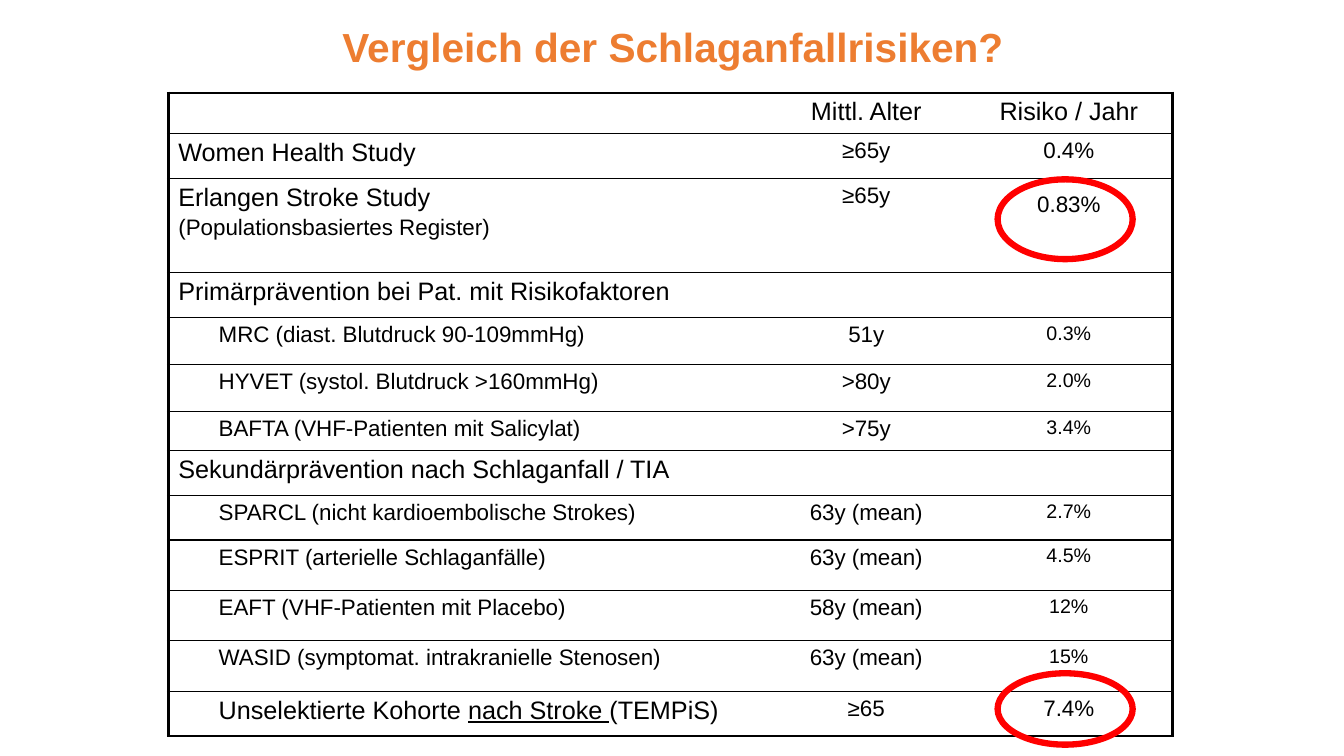
from dataclasses import dataclass

from lxml import etree
from pptx import Presentation
from pptx.dml.color import RGBColor
from pptx.enum.shapes import MSO_SHAPE
from pptx.enum.text import MSO_ANCHOR, PP_ALIGN
from pptx.oxml.ns import qn
from pptx.util import Pt

OVAL = MSO_SHAPE.OVAL
MIDDLE = MSO_ANCHOR.MIDDLE
LEFT, CENTER = PP_ALIGN.LEFT, PP_ALIGN.CENTER
TITLE_ONLY = 5


@dataclass(frozen=True)
class Theme:
    """Colours, font and sizes of the slide."""
    font: str = "Arial"
    accent: str = "ED7D31"
    ink: str = "000000"
    mark: str = "FF0000"
    title: int = 29
    large: int = 18
    medium: int = 16
    small: int = 14
    frame: float = 2.25
    rule: float = 1
    ring: float = 4.5
    indent: float = 28.8
    gap: float = 3


T = Theme()
TITLE_BOX = (157, 0, 648, 65.5)
TABLE_BOX = (120.2, 66.4, 717.1, 459.5)
COL_WIDTHS = (427.7, 141.8, 147.6)
RING_LEFT, RING_WIDTH = 592.4, 96.5
RINGS = ((61.7, 57), (414.5, 51))

HEADER, SECTION, STUDY, TRIAL, COHORT = range(5)
SIZES = {
    HEADER: (T.large, T.large, T.large),
    SECTION: (T.large, T.medium, T.medium),
    STUDY: (T.large, T.medium, T.medium),
    TRIAL: (T.medium, T.medium, T.small),
    COHORT: (T.large, T.medium, T.medium),
}
ROWS = (
    (HEADER, 28.8, "", "Mittl. Alter", "Risiko / Jahr"),
    (STUDY, 32.2, "Women Health Study", "≥65y", "0.4%"),
    (STUDY, 67.4, "Erlangen Stroke Study", "≥65y", "0.83%"),
    (SECTION, 32, "Primärprävention bei Pat. mit Risikofaktoren", "", ""),
    (TRIAL, 33.7, "MRC (diast. Blutdruck 90-109mmHg)", "51y", "0.3%"),
    (TRIAL, 33.7, "HYVET (systol. Blutdruck >160mmHg)", ">80y", "2.0%"),
    (TRIAL, 27.7, "BAFTA (VHF-Patienten mit Salicylat)", ">75y", "3.4%"),
    (SECTION, 32, "Sekundärprävention nach Schlaganfall / TIA", "", ""),
    (TRIAL, 32, "SPARCL (nicht kardioembolische Strokes)", "63y (mean)", "2.7%"),
    (TRIAL, 36, "ESPRIT (arterielle Schlaganfälle)", "63y (mean)", "4.5%"),
    (TRIAL, 36, "EAFT (VHF-Patienten mit Placebo)", "58y (mean)", "12%"),
    (TRIAL, 36, "WASID (symptomat. intrakranielle Stenosen)", "63y (mean)", "15%"),
    (COHORT, 32, "Unselektierte Kohorte ", "≥65", "7.4%"),
)
REGISTER_ROW, COHORT_ROW = 2, len(ROWS) - 1
REGISTER_NOTE = "(Populationsbasiertes Register)"
REGISTER_TOP = 10


def rgb(value):
    """Return a colour from its hex value."""
    return RGBColor.from_string(value)


def style(p, size, color=T.ink, align=LEFT):
    """Set font and alignment of a paragraph."""
    p.alignment = align
    p.font.name, p.font.size = T.font, Pt(size)
    p.font.color.rgb = rgb(color)


def add_title(s, box, text):
    """Move and fill the title placeholder."""
    sp = s.shapes.title
    sp.left, sp.top, sp.width, sp.height = map(Pt, box)
    tf = sp.text_frame
    tf.text, tf.vertical_anchor = text, MIDDLE
    style(tf.paragraphs[0], T.title, T.accent, CENTER)
    tf.paragraphs[0].font.bold = True


def set_borders(cell, widths):
    """Draw the left, right, top and bottom borders, with 0 for none."""
    tcPr = cell._tc.get_or_add_tcPr()
    for side, width in zip("LRTB", widths):
        ln = etree.SubElement(tcPr, qn(f"a:ln{side}"), w=str(int(Pt(width))))
        if width:
            fill = etree.SubElement(ln, qn("a:solidFill"))
            etree.SubElement(fill, qn("a:srgbClr"), val=T.ink)
        else:
            etree.SubElement(ln, qn("a:noFill"))


def fill_row(table, i, row):
    """Write one row with its text styles and borders."""
    kind, height, *texts = row
    table.rows[i].height = Pt(height)
    last = len(texts) - 1
    for j, (text, size) in enumerate(zip(texts, SIZES[kind])):
        cell = table.cell(i, j)
        set_borders(cell, (
            T.frame if j == 0 else 0,
            T.frame if j == last else 0,
            T.frame if i == 0 else T.rule,
            T.frame if i == COHORT_ROW else T.rule,
        ))
        cell.fill.background()
        p = cell.text_frame.paragraphs[0]
        if text:
            p.add_run().text = text
        style(p, size, align=CENTER if j else LEFT)
        if j == 0 and kind in (TRIAL, COHORT):
            p._p.get_or_add_pPr().set("marL", str(int(Pt(T.indent))))


def add_risk_table(s, box):
    """Add the table of studies, mean ages and yearly risks."""
    frame = s.shapes.add_table(len(ROWS), len(COL_WIDTHS), *map(Pt, box))
    table = frame.table
    table.first_row = table.horz_banding = False
    for column, width in zip(table.columns, COL_WIDTHS):
        column.width = Pt(width)
    for i, row in enumerate(ROWS):
        fill_row(table, i, row)

    p = table.cell(REGISTER_ROW, 0).text_frame.add_paragraph()
    p.text = REGISTER_NOTE
    style(p, T.medium)
    p.space_before = Pt(T.gap)
    table.cell(REGISTER_ROW, 2).margin_top = Pt(REGISTER_TOP)

    p = table.cell(COHORT_ROW, 0).text_frame.paragraphs[0]
    for text, underline in (("nach Stroke ", True), ("(TEMPiS)", False)):
        r = p.add_run()
        r.text, r.font.underline = text, underline


def add_rings(s, box):
    """Circle the two compared risks inside the table box."""
    left, top = box[:2]
    for offset, height in RINGS:
        ring = (left + RING_LEFT, top + offset, RING_WIDTH, height)
        sp = s.shapes.add_shape(OVAL, *map(Pt, ring))
        sp.shadow.inherit = False
        sp.fill.background()
        sp.line.color.rgb, sp.line.width = rgb(T.mark), Pt(T.ring)


def main():
    """Build and save the slide."""
    prs = Presentation()
    prs.slide_width, prs.slide_height = Pt(960), Pt(540)
    s = prs.slides.add_slide(prs.slide_layouts[TITLE_ONLY])
    add_title(s, TITLE_BOX, "Vergleich der Schlaganfallrisiken?")
    add_risk_table(s, TABLE_BOX)
    add_rings(s, TABLE_BOX)
    prs.save("out.pptx")


if __name__ == "__main__":
    main()
